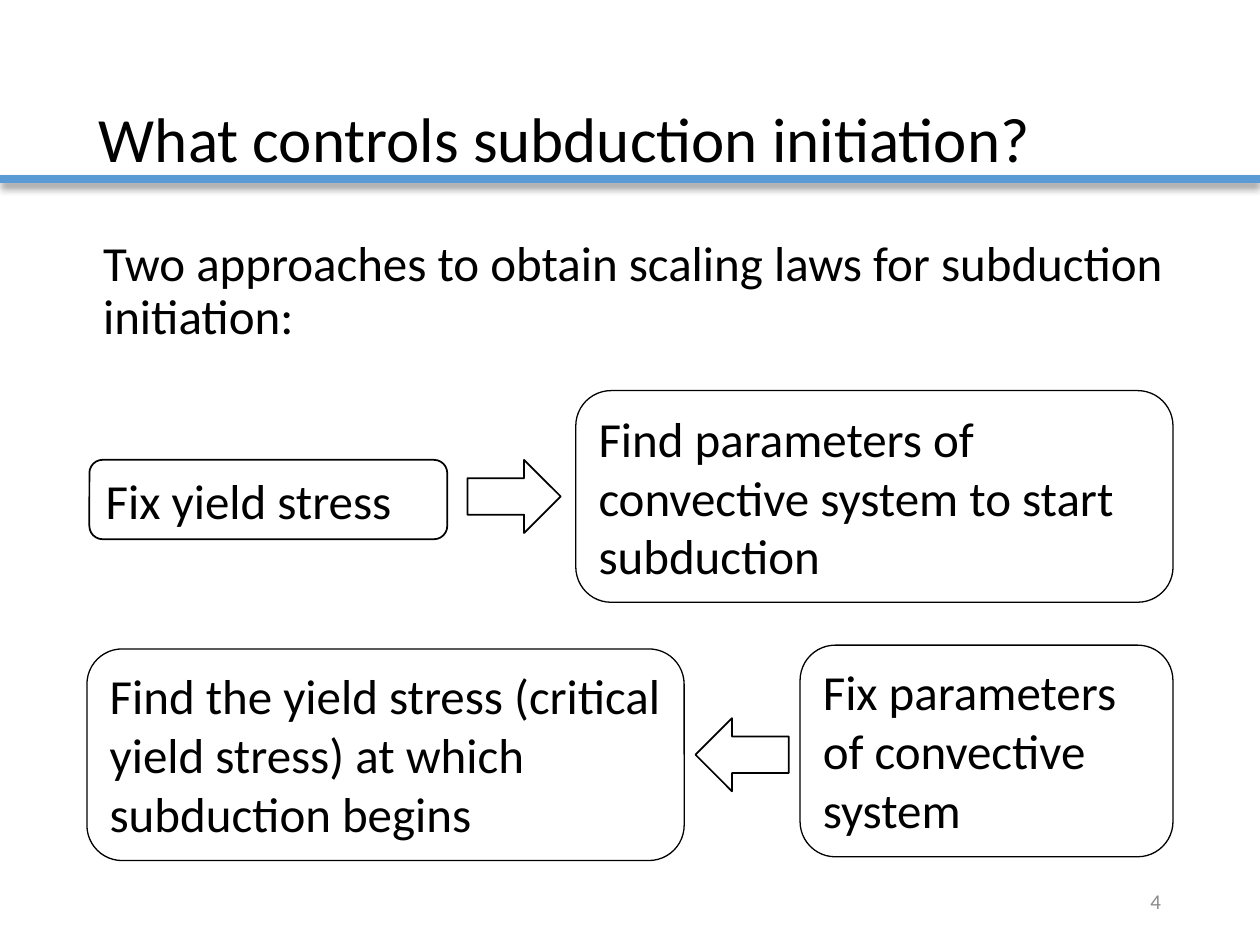
from lxml.etree import SubElement
from pptx import Presentation
from pptx.dml.color import RGBColor
from pptx.enum.shapes import MSO_CONNECTOR, MSO_SHAPE
from pptx.enum.text import MSO_ANCHOR, PP_ALIGN
from pptx.oxml.ns import qn
from pptx.util import Pt

THEME = {
    "font": "Calibri", "title": 36, "body": 28, "number": 12,
    "ink": "000000", "muted": "8C8C8C", "paper": "FFFFFF", "rule": "5B9BD5",
}
SLIDE_SIZE = (720, 540)
RULE = {"top": 102.24, "width": 5}
SHADOW = {"blurRad": Pt(4), "dist": Pt(3), "dir": 90 * 60000, "algn": "t", "rotWithShape": 0}
SHADOW_ALPHA = 40000

MIDDLE = {"vertical_anchor": MSO_ANCHOR.MIDDLE}
TOP = {"vertical_anchor": MSO_ANCHOR.TOP}
TEXTS = [
    ("What controls subduction initiation?", (49.5, 28.8, 621, 104.4),
     "title", "ink", MIDDLE, {"line_spacing": 0.9}),
    ("Two approaches to obtain scaling laws for subduction initiation:",
     (51.84, 133.2, 621, 342.72), "body", "ink", TOP,
     {"line_spacing": 0.9, "space_before": Pt(10)}),
    ("4", (508.5, 500.4, 162, 28.8), "number", "muted", MIDDLE,
     {"alignment": PP_ALIGN.RIGHT}),
]
BOXES = [
    ("Fix yield stress", (51.12, 262.8, 204.48, 45.36), 1, "paper", MIDDLE),
    ("Find parameters of convective system to start subduction",
     (329.04, 223.2, 341.28, 120.96), 0.75, None, MIDDLE),
    ("Find the yield stress (critical yield stress) at which subduction begins",
     (49.68, 370.8, 341.28, 120.96), 0.75, None, TOP),
    ("Fix parameters of convective system",
     (457.2, 368.64, 213.12, 120.96), 0.75, None, TOP),
]
ARROW_SIZE = (53.28, 41.76)
ARROWS = [
    (MSO_SHAPE.RIGHT_ARROW, (267.12, 262.8)),
    (MSO_SHAPE.LEFT_ARROW, (397.44, 410.4)),
]


def color(name):
    return RGBColor.from_string(THEME[name])


def apply(target, values):
    for name, value in values.items():
        setattr(target, name, value)


def write(shape, text, size, ink, frame_format, paragraph_format):
    frame = shape.text_frame
    apply(frame, {"word_wrap": True, **frame_format})
    paragraph = frame.paragraphs[0]
    apply(paragraph, {"alignment": PP_ALIGN.LEFT, **paragraph_format})
    run = paragraph.add_run()
    run.text = text
    apply(run.font, {"name": THEME["font"], "size": Pt(THEME[size])})
    run.font.color.rgb = color(ink)


def add_outline(slide, kind, bounds, line_width, fill=None):
    shape = slide.shapes.add_shape(kind, *map(Pt, bounds))
    shape.shadow.inherit = False
    if fill:
        shape.fill.solid()
        shape.fill.fore_color.rgb = color(fill)
    else:
        shape.fill.background()
    shape.line.color.rgb = color("ink")
    shape.line.width = Pt(line_width)
    return shape


def add_rule(slide):
    top = Pt(RULE["top"])
    rule = slide.shapes.add_connector(MSO_CONNECTOR.STRAIGHT, 0, top, Pt(SLIDE_SIZE[0]), top)
    rule.line.color.rgb = color("rule")
    rule.line.width = Pt(RULE["width"])
    effects = SubElement(rule._element.spPr, qn("a:effectLst"))
    shadow = SubElement(effects, qn("a:outerShdw"),
                        {name: str(value) for name, value in SHADOW.items()})
    shade = SubElement(shadow, qn("a:srgbClr"), val=THEME["ink"])
    SubElement(shade, qn("a:alpha"), val=str(SHADOW_ALPHA))


def main():
    """Build the slide on two approaches to subduction scaling laws."""
    presentation = Presentation()
    apply(presentation, dict(zip(("slide_width", "slide_height"), map(Pt, SLIDE_SIZE))))
    slide = presentation.slides.add_slide(presentation.slide_layouts[6])
    for text, bounds, size, ink, frame_format, paragraph_format in TEXTS:
        shape = slide.shapes.add_textbox(*map(Pt, bounds))
        write(shape, text, size, ink, frame_format, paragraph_format)
    add_rule(slide)
    for text, bounds, line_width, fill, frame_format in BOXES:
        shape = add_outline(slide, MSO_SHAPE.ROUNDED_RECTANGLE, bounds, line_width, fill)
        write(shape, text, "body", "ink", frame_format, {})
    for kind, position in ARROWS:
        add_outline(slide, kind, position + ARROW_SIZE, 1)
    presentation.save("out.pptx")


if __name__ == "__main__":
    main()
